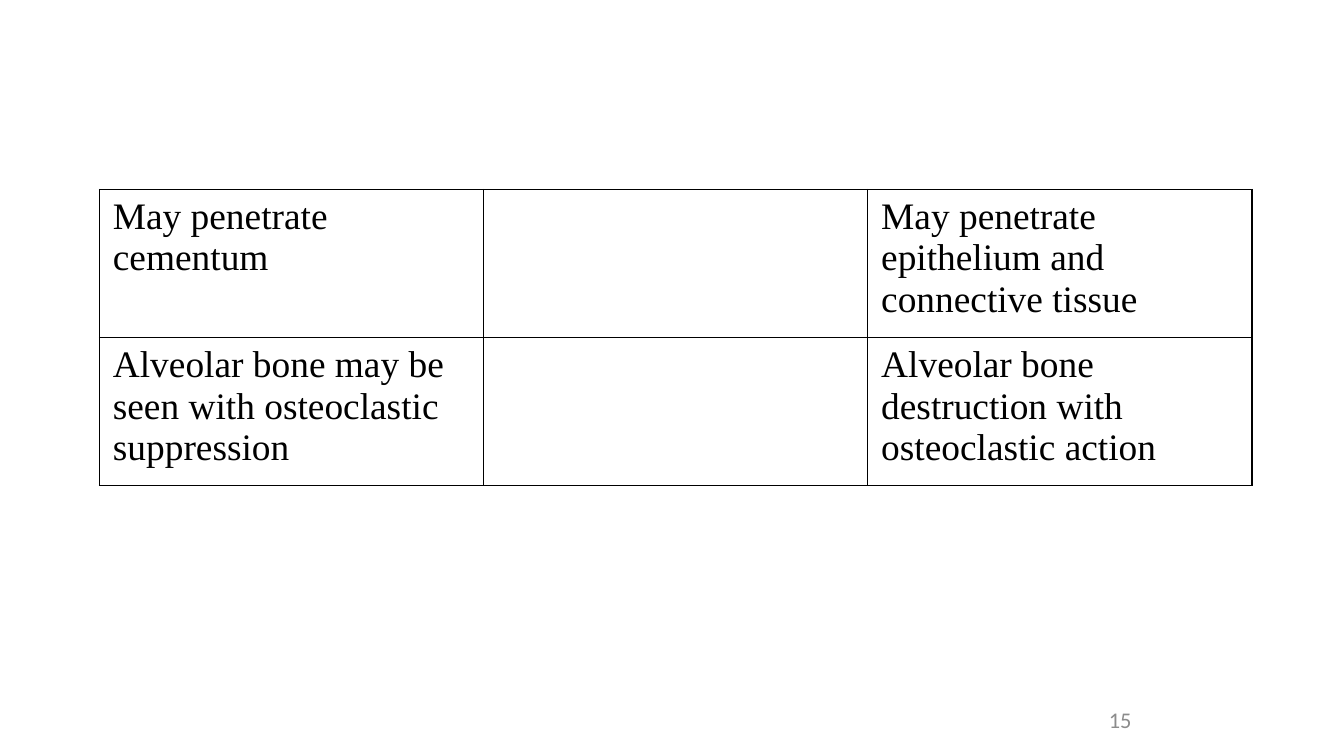
"""Build a slide with a bordered two-row comparison table and a page number."""
from lxml import etree
from pptx import Presentation, util as u
from pptx.dml.color import RGBColor
from pptx.enum import text
from pptx.oxml.ns import qn

BLACK = RGBColor(0x00, 0x00, 0x00)
GREY = RGBColor(0x8C, 0x8C, 0x8C)
ROWS = [
    ["May penetrate cementum", "", "May penetrate epithelium and connective tissue"],
    ["Alveolar bone may be seen with osteoclastic suppression", "",
     "Alveolar bone destruction with osteoclastic action"],
]
COLUMN_WIDTH = u.Cm(7.26)
ROW_HEIGHT = u.Cm(2.8)


def add_borders(cell):
    properties = cell._tc.get_or_add_tcPr()
    for position, side in enumerate(("lnL", "lnR", "lnT", "lnB")):
        line = etree.Element(qn(f"a:{side}"), w=str(u.Pt(0.75)))
        fill = etree.SubElement(line, qn("a:solidFill"))
        etree.SubElement(fill, qn("a:srgbClr"), val=str(BLACK))
        properties.insert(position, line)


deck = Presentation()
deck.slide_width = u.Cm(25.4)
deck.slide_height = u.Cm(14.29)
page = deck.slides.add_slide(deck.slide_layouts[6])

number_box = page.shapes.add_textbox(u.Cm(18.21), u.Cm(13.23), u.Cm(5.92), u.Cm(0.76))
number_box.text_frame.word_wrap = True
number_box.text_frame.vertical_anchor = text.MSO_ANCHOR.MIDDLE
para = number_box.text_frame.paragraphs[0]
para.text = "15"
para.alignment = text.PP_ALIGN.CENTER
para.font.name = "Calibri"
para.font.size = u.Pt(12)
para.font.color.rgb = GREY

table = page.shapes.add_table(
    len(ROWS), len(ROWS[0]), u.Cm(1.88), u.Cm(3.58),
    COLUMN_WIDTH * len(ROWS[0]), ROW_HEIGHT * len(ROWS)).table
table.first_row = False
table.horz_banding = False
for column in table.columns:
    column.width = COLUMN_WIDTH
for row, words in zip(table.rows, ROWS):
    row.height = ROW_HEIGHT
    for cell, wording in zip(row.cells, words):
        cell.fill.background()
        add_borders(cell)
        para = cell.text_frame.paragraphs[0]
        para.text = wording
        para.font.name = "Times New Roman"
        para.font.size = u.Pt(20)
        para.font.color.rgb = BLACK

deck.save("out.pptx")
